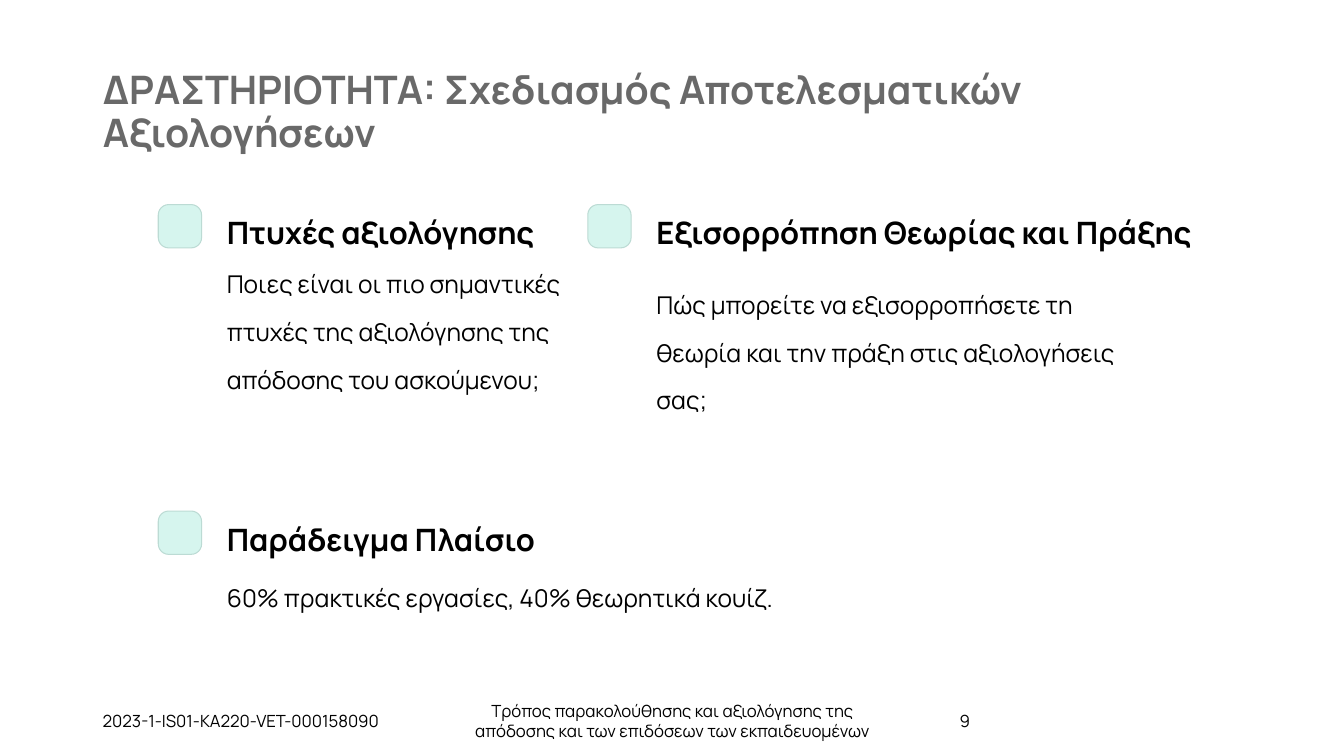
from pptx import Presentation
from pptx.dml.color import RGBColor
from pptx.enum.shapes import MSO_SHAPE
from pptx.enum.text import MSO_ANCHOR, PP_ALIGN
from pptx.util import Inches, Pt

FONT = "Manrope"
GREY = RGBColor(0x69, 0x69, 0x69)
BLACK = RGBColor(0, 0, 0)
MINT = RGBColor(0xD6, 0xF5, 0xEE)
EDGE = RGBColor(0xBC, 0xDB, 0xD4)

TITLE = "ΔΡΑΣΤΗΡΙΟΤΗΤΑ: Σχεδιασμός Αποτελεσματικών Αξιολογήσεων"

# left, top, heading, heading size, body, body drop, body size
TOPICS = [
    (1.57, 2.03, "Πτυχές αξιολόγησης", (3.33, 0.78),
     "Ποιες είναι οι πιο σημαντικές πτυχές της αξιολόγησης της "
     "απόδοσης του ασκούμενου;", 0.46, (3.33, 2.04)),
    (5.83, 2.03, "Εξισορρόπηση Θεωρίας και Πράξης", (5.41, 1.16),
     "Πώς μπορείτε να εξισορροπήσετε τη θεωρία και την πράξη στις "
     "αξιολογήσεις σας;", 0.66, (4.59, 1.45)),
    (1.57, 5.07, "Παράδειγμα Πλαίσιο", (3.99, 0.39),
     "60% πρακτικές εργασίες, 40% θεωρητικά κουίζ.", 0.53, (7.58, 0.4)),
]

# left, width, text, alignment
FOOTER = [
    (0.92, 3, "2023-1-IS01-KA220-VET-000158090", PP_ALIGN.LEFT),
    (4.42, 4.5, "Τρόπος παρακολούθησης και αξιολόγησης της απόδοσης και "
     "των επιδόσεων των εκπαιδευομένων", PP_ALIGN.CENTER),
    (9.42, 3, "9", PP_ALIGN.LEFT),
]

MARK = 0.43   # side of a marker
INDENT = 0.68  # from marker to text


def write(shape, text, size, color=BLACK, bold=False, gap=1.0,
          align=PP_ALIGN.LEFT, anchor=MSO_ANCHOR.TOP, inset=(0, 0)):
    frame = shape.text_frame
    frame.word_wrap = True
    frame.vertical_anchor = anchor
    frame.margin_left = frame.margin_right = Inches(inset[0])
    frame.margin_top = frame.margin_bottom = Inches(inset[1])
    para = frame.paragraphs[0]
    para.alignment = align
    para.line_spacing = gap
    run = para.add_run()
    run.text = text
    font = run.font
    font.name, font.size, font.bold = FONT, Pt(size), bold
    font.color.rgb = color


def add_box(slide, left, top, width, height):
    return slide.shapes.add_textbox(
        Inches(left), Inches(top), Inches(width), Inches(height))


def add_mark(slide, left, top):
    mark = slide.shapes.add_shape(
        MSO_SHAPE.ROUNDED_RECTANGLE,
        Inches(left), Inches(top), Inches(MARK), Inches(MARK))
    mark.adjustments[0] = 0.24
    mark.shadow.inherit = False
    mark.fill.solid()
    mark.fill.fore_color.rgb = MINT
    mark.line.color.rgb = EDGE
    mark.line.width = Pt(0.75)


def main():
    deck = Presentation()
    deck.slide_width, deck.slide_height = Inches(13.33), Inches(7.5)
    slide = deck.slides.add_slide(deck.slide_layouts[5])

    title = slide.shapes.title
    title.left, title.top = Inches(0.92), Inches(0.4)
    title.width, title.height = Inches(9.52), Inches(1.45)
    write(title, TITLE, 28, GREY, True, 0.9,
          anchor=MSO_ANCHOR.MIDDLE, inset=(0.1, 0.05))

    for left, width, text, align in FOOTER:
        write(add_box(slide, left, 6.95, width, 0.4), text, 12,
              align=align, anchor=MSO_ANCHOR.MIDDLE, inset=(0.1, 0.05))

    for left, top, head, head_size, body, drop, body_size in TOPICS:
        add_mark(slide, left, top)
        text_left = left + INDENT
        write(add_box(slide, text_left, top, *head_size), head, 22,
              bold=True, gap=1.25)
        write(add_box(slide, text_left, top + drop, *body_size), body, 17.5,
              gap=1.63)

    deck.save("out.pptx")


if __name__ == "__main__":
    main()
